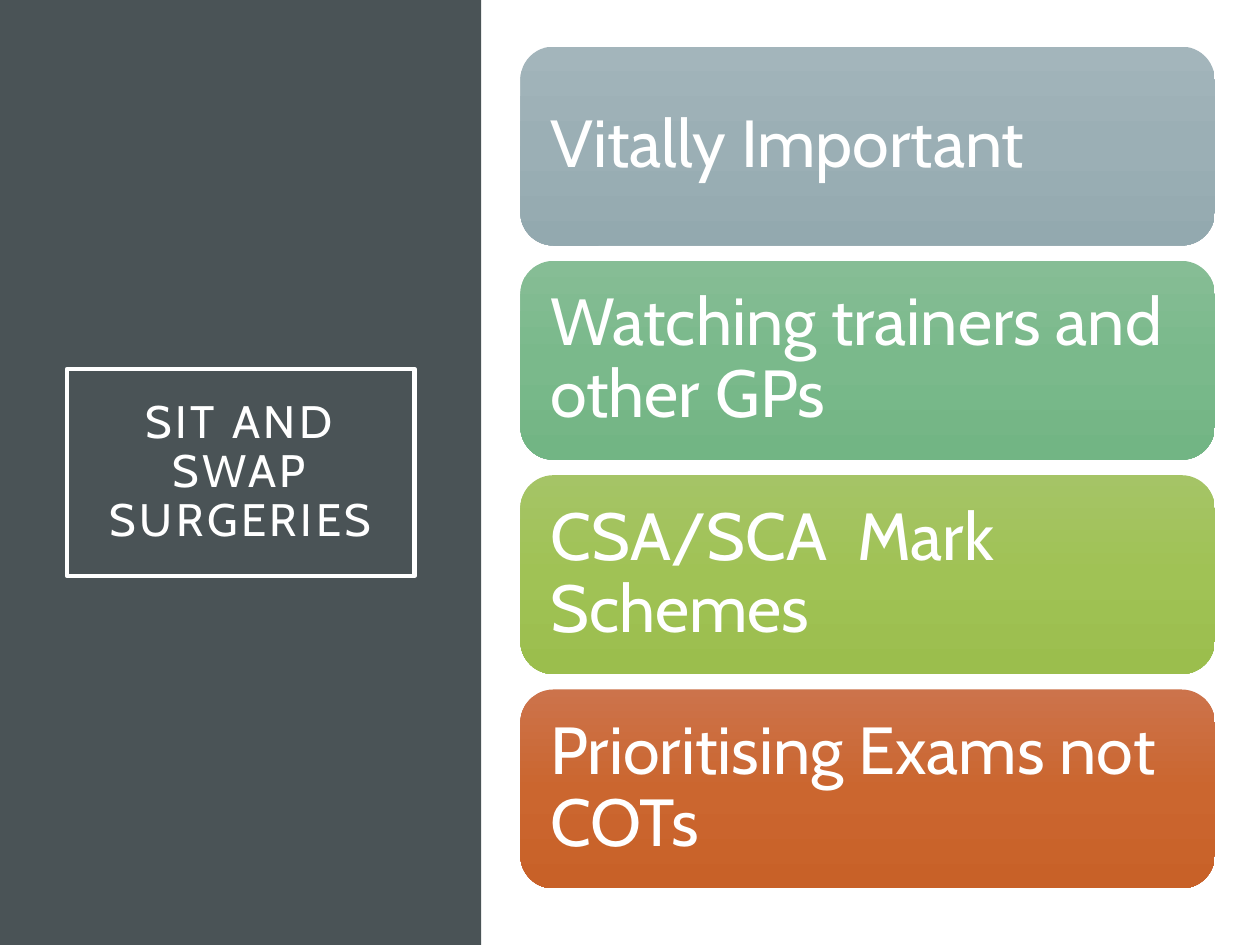
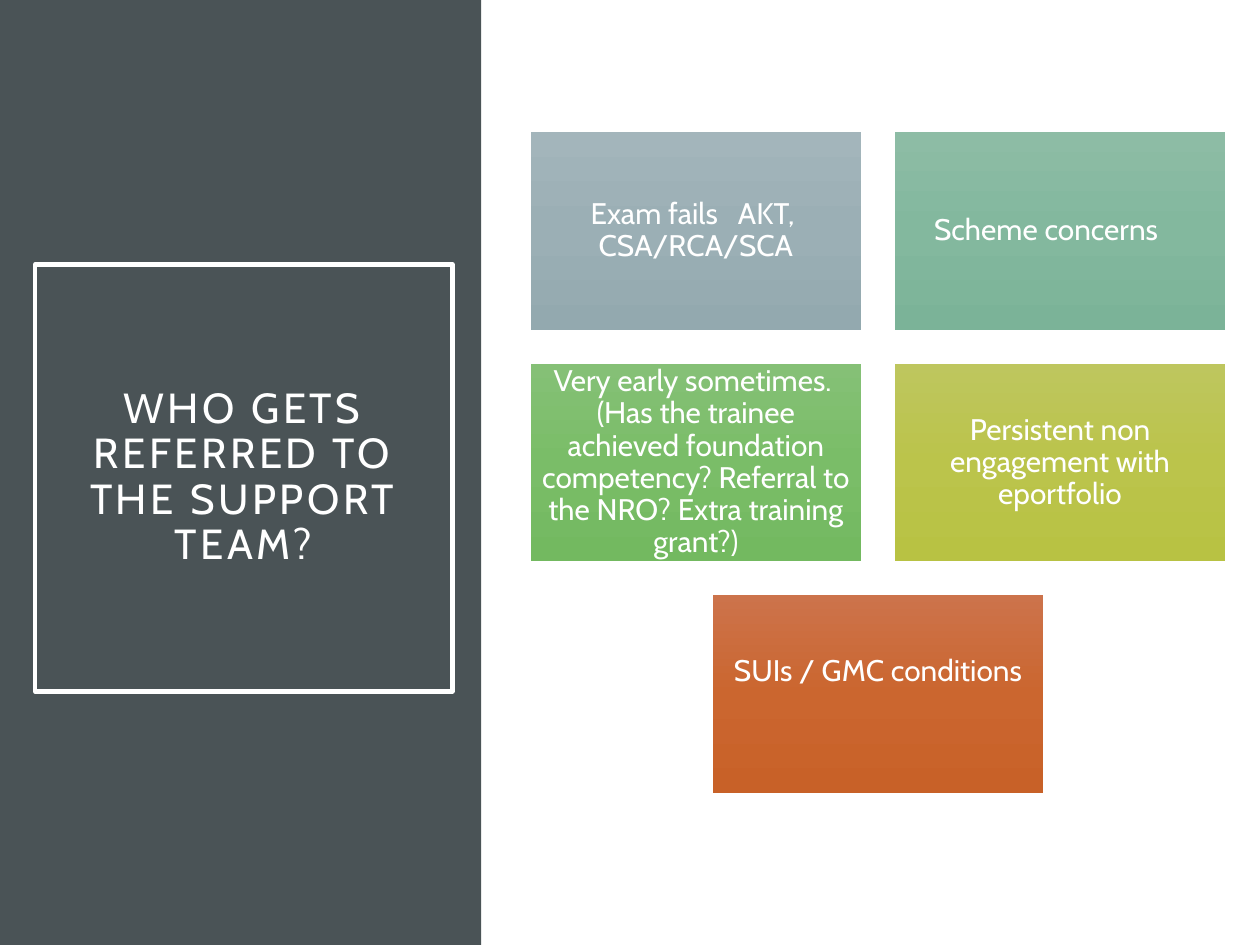
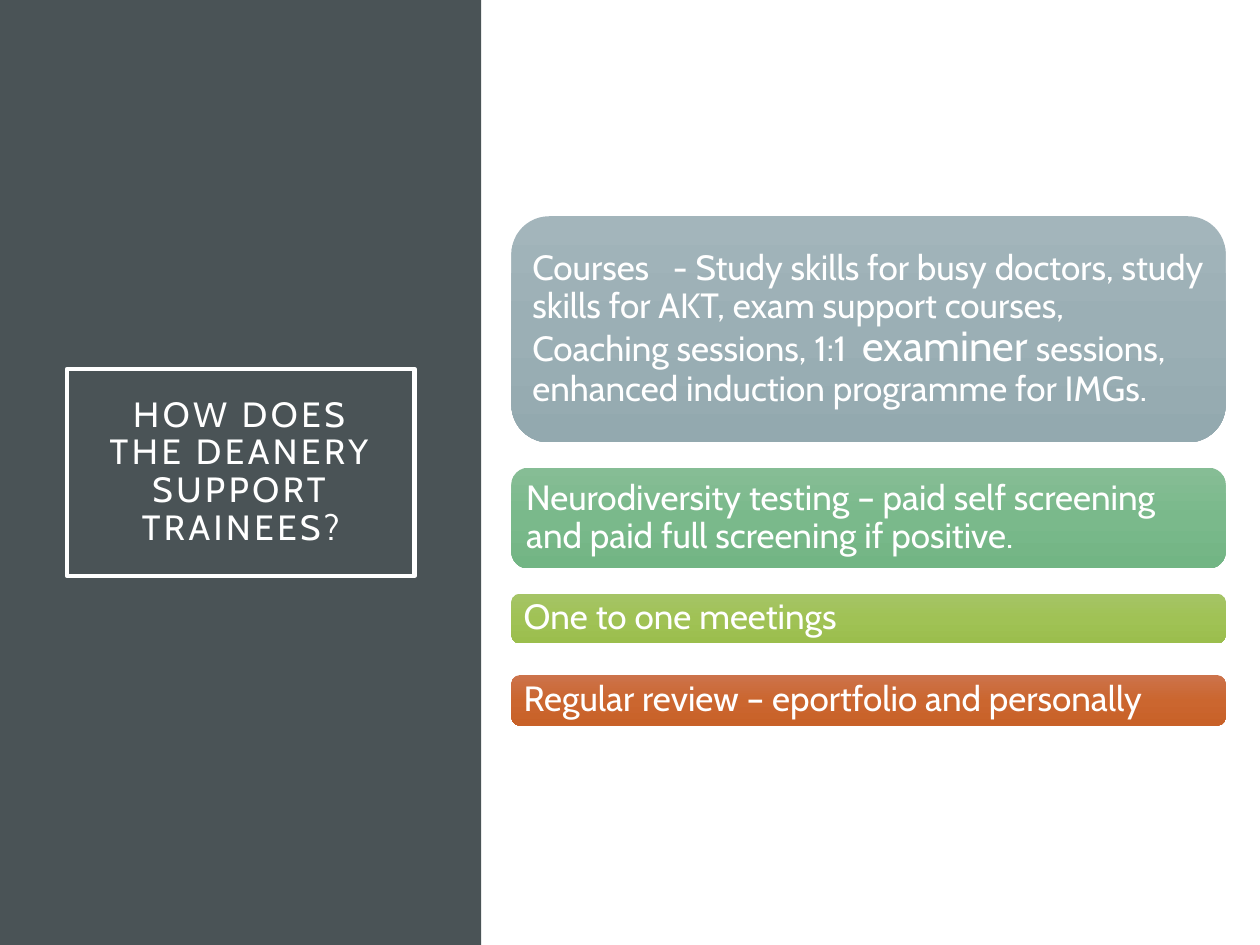
from copy import deepcopy

from pptx import Presentation
from pptx.dml.color import RGBColor
from pptx.enum.shapes import MSO_SHAPE
from pptx.enum.text import MSO_ANCHOR, MSO_AUTO_SIZE, PP_ALIGN
from pptx.oxml.ns import qn
from pptx.util import Cm, Pt

COLOURS = {"panel": "4A5356", "white": "FFFFFF"}
GRADIENTS = {
    "grey": ("A3B5BB", "9BAFB5", "93A9AF"),
    "teal": ("8DBCA5", "83B89E", "7BB398"),
    "mint": ("86BD95", "7AB98B", "72B584"),
    "green": ("85C076", "7ABD68", "73B960"),
    "lime": ("A5C466", "A0C255", "9BBE4D"),
    "olive": ("BEC65E", "BBC44B", "B8C243"),
    "orange": ("CC734B", "CB662F", "C86128"),
}
FONT = "Cabin"
SLIDE_WIDTH, SLIDE_HEIGHT = 25.4, 19.05
PANEL_WIDTH = 9.7
SMALL_FRAME = (1.35, 7.44, 7.01, 4.17)
LARGE_FRAME = (0.71, 5.33, 8.41, 8.61)


def colour(name):
    return RGBColor.from_string(COLOURS[name])


def cm_box(box):
    return [Cm(round(length, 2)) for length in box]


def write_text(shape, text, size, align=PP_ALIGN.LEFT, margin=0.2,
               extra_right=0, extra_bottom=0, tracking=None):
    """Write a string, or a list of (string, size) runs, as one paragraph."""
    frame = shape.text_frame
    frame.word_wrap = True
    frame.auto_size = MSO_AUTO_SIZE.NONE
    frame.vertical_anchor = MSO_ANCHOR.MIDDLE
    frame.margin_left = frame.margin_top = Cm(margin)
    frame.margin_right = Cm(margin + extra_right)
    frame.margin_bottom = Cm(margin + extra_bottom)
    paragraph = frame.paragraphs[0]
    paragraph.alignment = align
    paragraph.line_spacing = 0.9
    for words, points in [(text, size)] if isinstance(text, str) else text:
        run = paragraph.add_run()
        run.text = words
        run.font.name = FONT
        run.font.size = Pt(points)
        run.font.color.rgb = colour("white")
        if tracking:
            run._r.get_or_add_rPr().set("spc", str(tracking * 100))


def fill_gradient(shape, name):
    """Fill from top to bottom with three evenly placed stops."""
    shape.fill.gradient()
    shape.fill.gradient_angle = 270
    stop_list = shape._element.spPr.find(".//" + qn("a:gsLst"))
    stop_list.insert(1, deepcopy(stop_list[0]))
    for index, stop in enumerate(shape.fill.gradient_stops):
        stop.position = index / 2
        stop.color.rgb = RGBColor.from_string(GRADIENTS[name][index])


def add_plain_shape(slide, kind, box):
    shape = slide.shapes.add_shape(kind, *cm_box(box))
    shape.shadow.inherit = False
    shape.line.fill.background()
    return shape


def add_card(slide, kind, box, gradient, text, size, **text_format):
    card = add_plain_shape(slide, kind, box)
    fill_gradient(card, gradient)
    write_text(card, text, size, **text_format)


def add_titled_slide(deck, title, size, frame_box):
    """Add a slide with the dark side panel and the framed title on it."""
    slide = deck.slides.add_slide(deck.slide_layouts[5])
    panel = add_plain_shape(slide, MSO_SHAPE.RECTANGLE,
                            (0, 0, PANEL_WIDTH, SLIDE_HEIGHT))
    panel.fill.solid()
    panel.fill.fore_color.rgb = colour("panel")
    slide.shapes._spTree.insert(2, panel._element)

    heading = slide.shapes.title
    heading.left, heading.top, heading.width, heading.height = cm_box(frame_box)
    heading.line.color.rgb = colour("white")
    heading.line.width = Pt(2.5)
    write_text(heading, title, size, align=PP_ALIGN.CENTER, margin=0.51,
               tracking=2)
    return slide


def add_even_stack(slide, box, gap, cards):
    left, top, width, height = box
    card_height = (height - gap * (len(cards) - 1)) / len(cards)
    for index, (gradient, text) in enumerate(cards):
        card_top = top + index * (card_height + gap)
        add_card(slide, MSO_SHAPE.ROUNDED_RECTANGLE,
                 (left, card_top, width, card_height),
                 gradient, text, 38, margin=0.41)


def add_fitted_stack(slide, left, width, cards):
    """Stack cards whose heights follow their text."""
    for top, height, gradient, text in cards:
        add_card(slide, MSO_SHAPE.ROUNDED_RECTANGLE,
                 (left, top, width, height), gradient, text, 20)


def add_card_grid(slide, box, gap, cards, columns=2):
    """Lay cards out in rows, with a short last row centred."""
    left, top, width, height = box
    rows = -(-len(cards) // columns)
    card_width = (width - gap * (columns - 1)) / columns
    card_height = (height - gap * (rows - 1)) / rows
    for index, (gradient, text, text_format) in enumerate(cards):
        row, column = divmod(index, columns)
        missing = max(0, (row + 1) * columns - len(cards))
        card_left = left + (column + missing / 2) * (card_width + gap)
        card_top = top + row * (card_height + gap)
        add_card(slide, MSO_SHAPE.RECTANGLE,
                 (card_left, card_top, card_width, card_height),
                 gradient, text, 17, align=PP_ALIGN.CENTER, **text_format)


def build_surgeries(deck):
    slide = add_titled_slide(deck, "SIT AND SWAP SURGERIES", 26, SMALL_FRAME)
    add_even_stack(slide, (10.49, 0.94, 14, 16.97), 0.31, [
        ("grey", "Vitally Important"),
        ("mint", "Watching trainers and other GPs"),
        ("lime", "CSA/SCA  Mark Schemes"),
        ("orange", "Prioritising Exams not COTs"),
    ])


def build_referrals(deck):
    slide = add_titled_slide(deck, "WHO GETS REFERRED TO THE SUPPORT TEAM?",
                             24, LARGE_FRAME)
    add_card_grid(slide, (10.7, 2.66, 14, 13.33), 0.68, [
        ("grey", "Exam fails   AKT,  CSA/RCA/SCA", {}),
        ("teal", "Scheme concerns", {"extra_right": 0.56}),
        ("green", "Very early sometimes.  (Has the trainee achieved "
                  "foundation competency? Referral to the NRO? "
                  "Extra training grant?)", {}),
        ("olive", "Persistent non engagement with eportfolio", {}),
        ("orange", "SUIs / GMC conditions", {"extra_bottom": 0.88}),
    ])


def build_support(deck):
    slide = add_titled_slide(deck, "HOW DOES THE DEANERY SUPPORT TRAINEES?",
                             20, SMALL_FRAME)
    courses = [
        ("Courses   - Study skills for busy doctors, study skills for AKT, "
         "exam support courses, Coaching sessions, 1:1  ", 20),
        ("examiner", 24),
        (" sessions,  enhanced induction programme for IMGs.", 20),
    ]
    add_fitted_stack(slide, 10.31, 14.4, [
        (4.36, 4.56, "grey", courses),
        (9.43, 2.03, "mint", "Neurodiversity testing – paid self screening "
                             "and paid full screening if positive."),
        (11.97, 1, "lime", "One to one meetings"),
        (13.61, 1.02, "orange", "Regular review – eportfolio and personally"),
    ])


def main():
    deck = Presentation()
    deck.slide_width, deck.slide_height = Cm(SLIDE_WIDTH), Cm(SLIDE_HEIGHT)
    build_surgeries(deck)
    build_referrals(deck)
    build_support(deck)
    deck.save("out.pptx")


if __name__ == "__main__":
    main()
